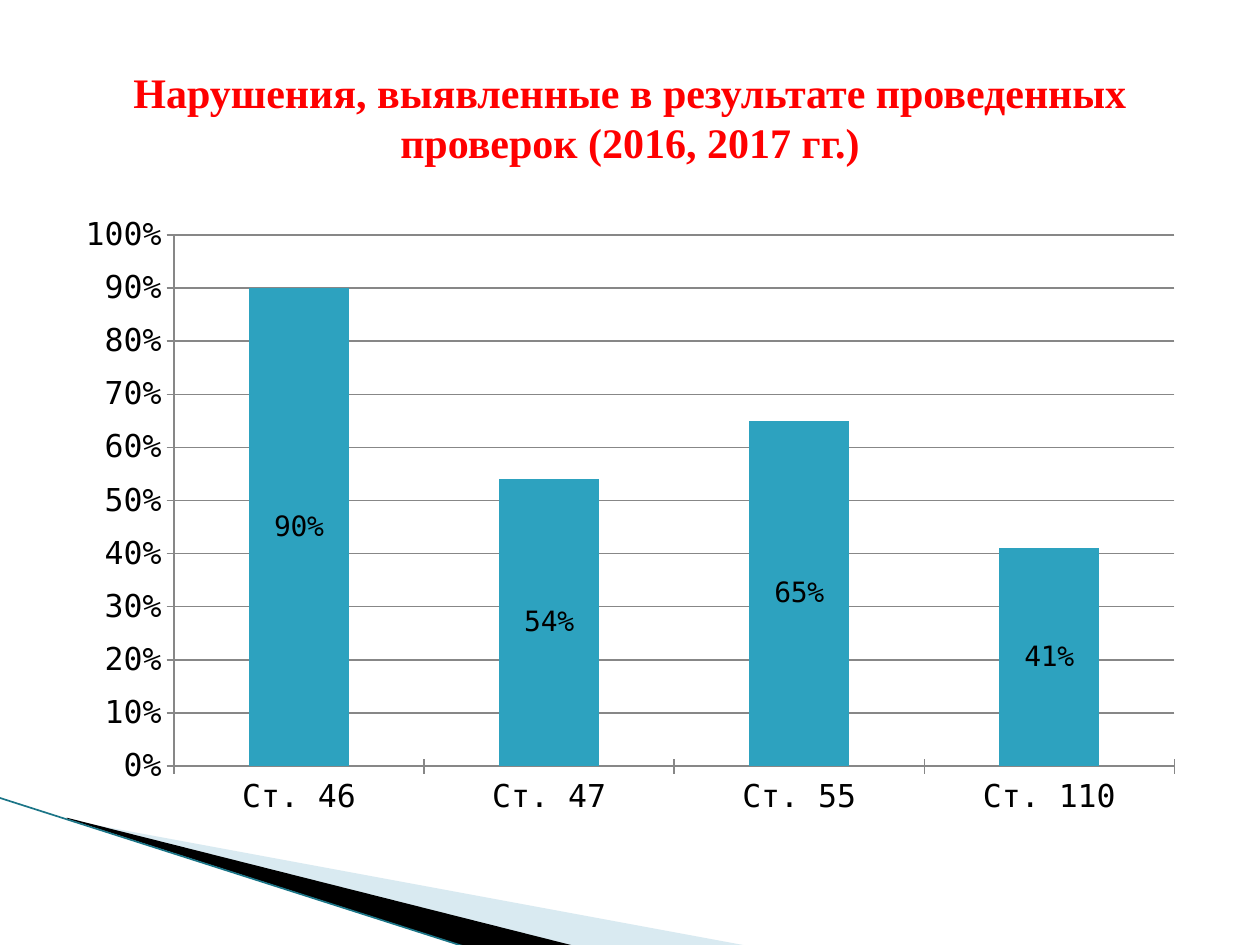
from pptx import Presentation
from pptx.chart.data import CategoryChartData
from pptx.dml.color import RGBColor
from pptx.enum.chart import XL_CHART_TYPE, XL_LABEL_POSITION, XL_TICK_MARK
from pptx.enum.shapes import MSO_CONNECTOR
from pptx.enum.text import MSO_ANCHOR, PP_ALIGN
from pptx.oxml.ns import qn
from pptx.util import Inches, Pt
from lxml import etree

STACK = XL_CHART_TYPE.COLUMN_STACKED
MID = XL_LABEL_POSITION.CENTER
CROSS = XL_TICK_MARK.CROSS
LINE = MSO_CONNECTOR.STRAIGHT
MIDDLE = MSO_ANCHOR.MIDDLE
CENTER = PP_ALIGN.CENTER

TITLE = "Нарушения, выявленные в результате проведенных проверок (2016, 2017 гг.)"
SERIES = "Series 1"
DATA = {"Ст. 46": 0.9, "Ст. 47": 0.54, "Ст. 55": 0.65, "Ст. 110": 0.41}

THEME = {
    "serif": "Times New Roman", "mono": "DejaVu Sans Mono",
    "title": 24, "axis": 18, "label": 16,
    "red": "FF0000", "ink": "000000", "bar": "2DA2BF",
    "grid": "878787", "pale": "A0CBDC", "edge": "1B7587",
}
WIDE, HIGH = 10, 7.5
HEAD = (5, 4, 90, 16.67)
PLOT = (5, 21.6, 90, 66)
WEDGES = [
    ("pale", 40, [(5.5, 86.8), (59.5, 100.13), (45.6, 100.13), (5.5, 86.67)]),
    ("ink", 100, [(5.3, 86.53), (45.7, 100.13), (37.2, 100.27), (5.4, 86.67)]),
]
EDGE = [(-0.1, 84.4), (37.1, 100.27)]


def color(key):
    return RGBColor.from_string(THEME[key])


def point(x, y):
    return Inches(x * WIDE / 100), Inches(y * HIGH / 100)


def frame(x, y, w, h):
    return *point(x, y), *point(w, h)


def style(font, face, size, ink, bold=False):
    font.name, font.size, font.bold = THEME[face], Pt(THEME[size]), bold
    font.color.rgb = color(ink)


def write(slide, text, box, face, size, ink, bold=False, align=CENTER):
    body = slide.shapes.add_textbox(*frame(*box)).text_frame
    body.word_wrap = True
    body.vertical_anchor = MIDDLE
    para = body.paragraphs[0]
    para.alignment = align
    run = para.add_run()
    run.text = text
    style(run.font, face, size, ink, bold)


def wedge(slide, key, alpha, dots):
    first, *rest = [point(*dot) for dot in dots]
    path = slide.shapes.build_freeform(*first)
    path.add_line_segments(rest, close=True)
    shape = path.convert_to_shape()
    shape.shadow.inherit = False
    shape.line.fill.background()
    shape.fill.solid()
    shape.fill.fore_color.rgb = color(key)
    if alpha < 100:
        tint = shape.fill._xPr.find(".//" + qn("a:srgbClr"))
        etree.SubElement(tint, qn("a:alpha"), val=str(alpha * 1000))


def edge(slide, start, end):
    rule = slide.shapes.add_connector(LINE, *point(*start), *point(*end))
    rule.line.color.rgb = color("edge")
    rule.line.width = Pt(0.95)
    etree.SubElement(rule._element.spPr, qn("a:effectLst"))


def graph(slide):
    data = CategoryChartData(number_format="0%")
    data.categories = list(DATA)
    data.add_series(SERIES, list(DATA.values()))
    chart = slide.shapes.add_chart(STACK, *frame(*PLOT), data).chart
    chart.has_legend = chart.has_title = False
    style(chart.font, "mono", "axis", "ink")

    plot = chart.plots[0]
    plot.gap_width, plot.overlap, plot.vary_by_categories = 150, 100, False
    fill = plot.series[0].format.fill
    fill.solid()
    fill.fore_color.rgb = color("bar")
    marks = plot.series[0].data_labels
    marks.show_value = True
    marks.number_format, marks.number_format_is_linked = "0%", False
    marks.position = MID
    style(marks.font, "mono", "label", "ink")

    value = chart.value_axis
    value.minimum_scale, value.maximum_scale, value.major_unit = 0, 1, 0.1
    value.has_major_gridlines = True
    value.tick_labels.number_format = "0%"
    value.tick_labels.number_format_is_linked = False
    for axis in (chart.category_axis, value):
        axis.major_tick_mark = CROSS
    for part in (chart.category_axis, value, value.major_gridlines):
        part.format.line.color.rgb = color("grid")
        part.format.line.width = Pt(0.75)


def main():
    deck = Presentation()
    deck.slide_width, deck.slide_height = Inches(WIDE), Inches(HIGH)
    slide = deck.slides.add_slide(deck.slide_layouts[6])
    for item in WEDGES:
        wedge(slide, *item)
    edge(slide, *EDGE)
    graph(slide)
    write(slide, TITLE, HEAD, face="serif", size="title", ink="red", bold=True)
    deck.save("out.pptx")


if __name__ == "__main__":
    main()
